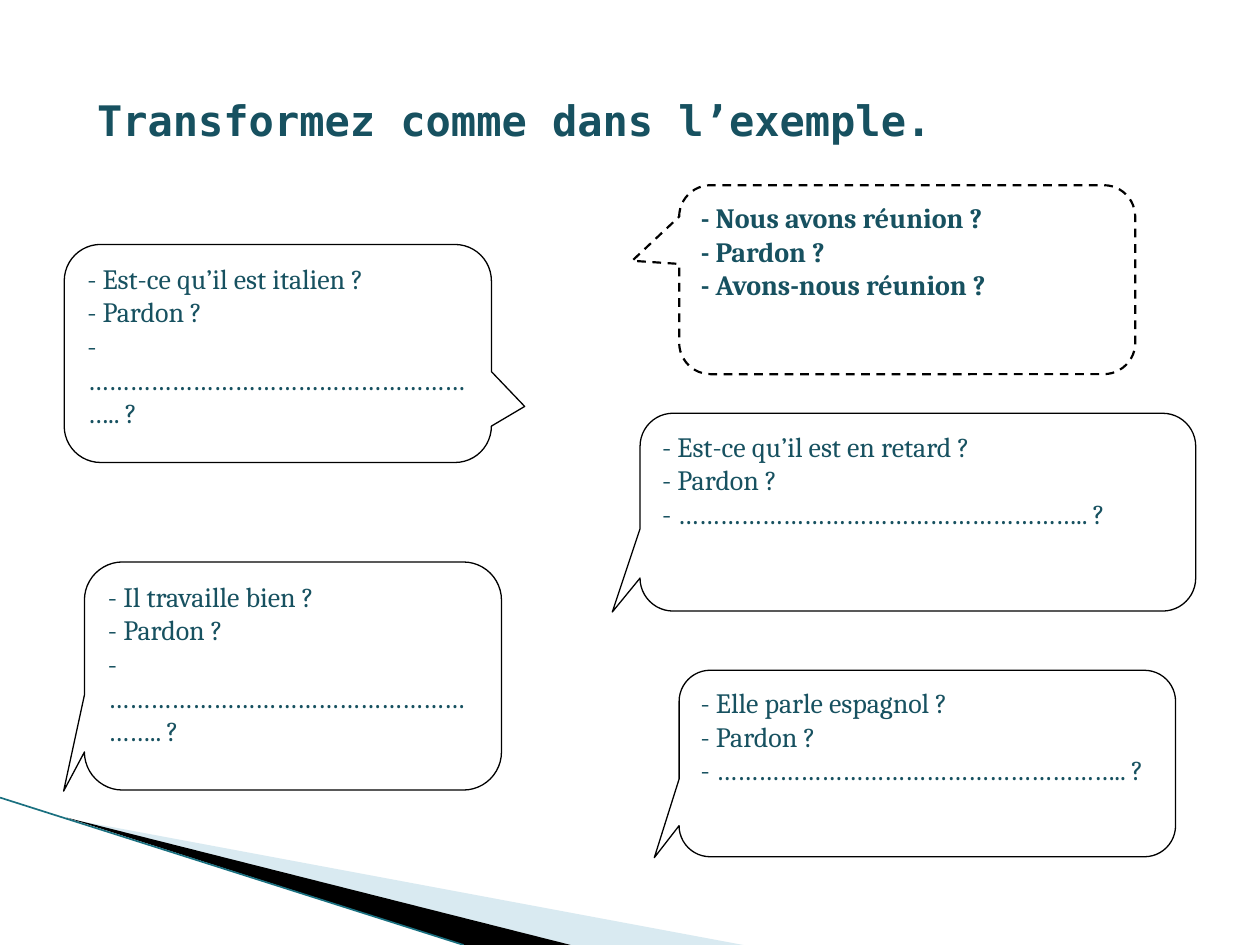
from lxml.etree import SubElement
from pptx import Presentation
from pptx.dml.color import RGBColor
from pptx.enum.dml import MSO_LINE
from pptx.enum.shapes import MSO_CONNECTOR, MSO_SHAPE
from pptx.enum.text import MSO_ANCHOR, PP_ALIGN
from pptx.oxml.ns import qn
from pptx.util import Inches, Pt

WIDTH, HEIGHT = Inches(10), Inches(7.5)
INK = "175160"
BLANK = "…………………………………………………..\u00a0?".replace("\u00a0", " ")
LOW_LEFT = (-0.55, 0.505)

# left, top, width, height in percent of the slide; tail; first and last lines
BUBBLES = [
    ((5.1, 25.87, 33.9, 23.07), (0.578, 0.243), "Est-ce qu’il est italien ?", BLANK),
    ((50.8, 43.73, 44.1, 20.93), LOW_LEFT, "Est-ce qu’il est en retard ?", BLANK),
    ((6.7, 59.47, 33.1, 24.13), LOW_LEFT, "Il travaille bien ?", BLANK),
    ((53.9, 70.93, 39.4, 19.73), LOW_LEFT, "Elle parle espagnol ?", BLANK),
]
MODEL = ((53.9, 19.6, 36.2, 20), (-0.603, -0.1),
         "Nous avons réunion ?", "Avons-nous réunion ?")


def color(code):
    return RGBColor.from_string(code)


def point(x, y):
    """Turn percents of the slide's size into lengths."""
    return int(WIDTH * x / 100), int(HEIGHT * y / 100)


def style(para, size, face, bold):
    para.alignment = PP_ALIGN.LEFT
    font = para.font
    font.size, font.name, font.bold = Pt(size), face, bold
    font.color.rgb = color(INK)


def add_title(slide, text):
    title = slide.shapes.title
    title.left, title.top = point(6.7, 0)
    title.width, title.height = point(70.1, 14.67)
    frame = title.text_frame
    frame.text = text
    frame.vertical_anchor = MSO_ANCHOR.TOP
    frame.margin_top, frame.margin_bottom = Inches(0.75), 0
    style(frame.paragraphs[0], 24, "DejaVu Sans Mono", True)


def add_wedge(slide, points, code, alpha=None):
    start, *rest = [point(*pair) for pair in points]
    pen = slide.shapes.build_freeform(*start)
    pen.add_line_segments(rest)
    wedge = pen.convert_to_shape()
    wedge.shadow.inherit = False
    wedge.line.fill.background()
    wedge.fill.solid()
    wedge.fill.fore_color.rgb = color(code)
    if alpha:
        tint = wedge.fill._xPr.find(".//" + qn("a:srgbClr"))
        SubElement(tint, qn("a:alpha")).set("val", str(alpha * 1000))


def add_line(slide, start, end, code):
    line = slide.shapes.add_connector(
        MSO_CONNECTOR.STRAIGHT, *point(*start), *point(*end))
    line.line.color.rgb = color(code)
    line.line.width = Pt(0.95)
    SubElement(line._element.spPr, qn("a:effectLst"))


def add_bubble(slide, box, tail, first, last, model=False):
    bubble = slide.shapes.add_shape(
        MSO_SHAPE.ROUNDED_RECTANGULAR_CALLOUT, *point(*box[:2]), *point(*box[2:]))
    for index, value in enumerate((*tail, 0.167)):
        bubble.adjustments[index] = value
    bubble.shadow.inherit = False
    bubble.fill.solid()
    bubble.fill.fore_color.rgb = color("FFFFFF")
    bubble.line.color.rgb = color("000000")
    bubble.line.width = Pt(1.25 if model else 0.75)
    if model:
        bubble.line.dash_style = MSO_LINE.DASH
    frame = bubble.text_frame
    frame.word_wrap = True
    frame.vertical_anchor = MSO_ANCHOR.TOP
    frame.text = "\n".join(f"- {text}" for text in (first, "Pardon ?", last))
    for para in frame.paragraphs:
        style(para, 16, "Cambria", model)


def main():
    deck = Presentation()
    deck.slide_width, deck.slide_height = WIDTH, HEIGHT
    slide = deck.slides.add_slide(deck.slide_layouts[5])
    add_wedge(slide, [(5.5, 86.67), (59, 100), (45.3, 100)], "A0CBDC", 40)
    add_wedge(slide, [(5.3, 86.53), (45.3, 100), (36.8, 100)], "000000")
    add_line(slide, (0, 84.4), (36.8, 100), "1A7080")
    add_title(slide, "Transformez comme dans l’exemple.")
    add_bubble(slide, *MODEL, model=True)
    for bubble in BUBBLES:
        add_bubble(slide, *bubble)
    deck.save("out.pptx")


if __name__ == "__main__":
    main()
